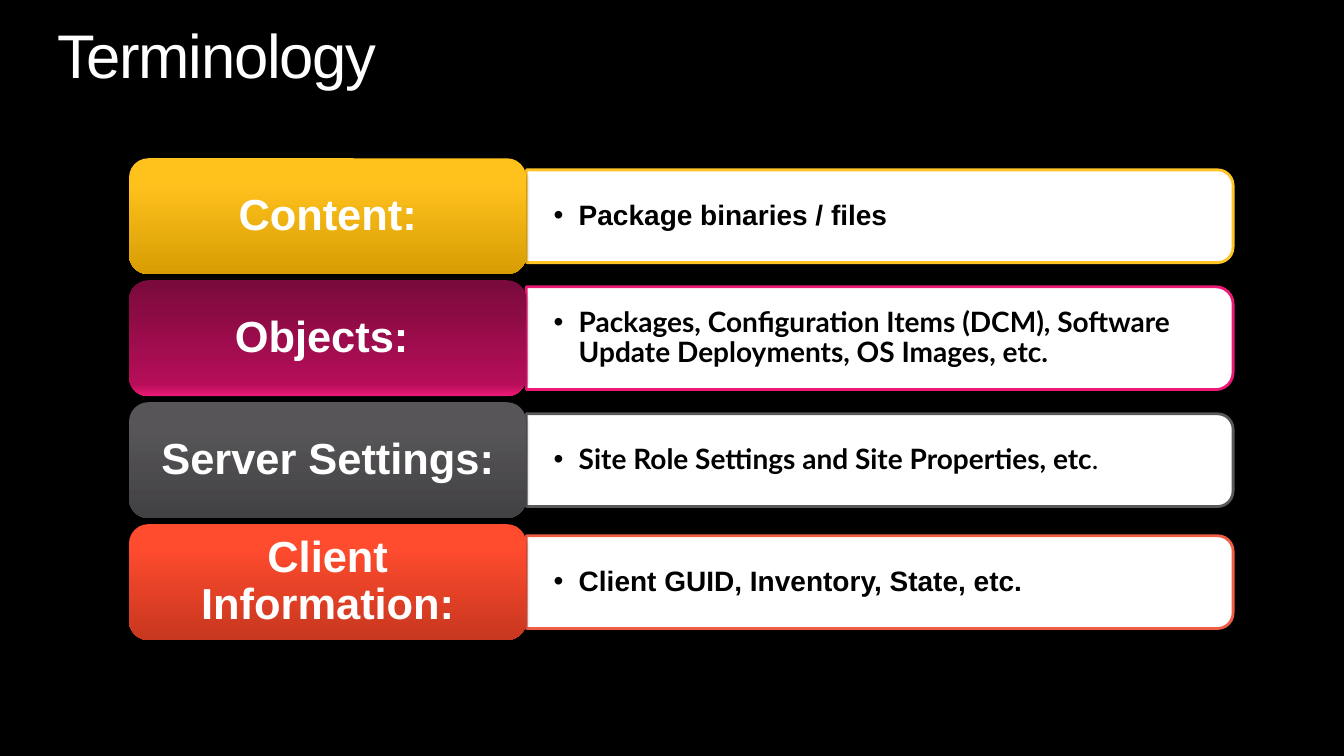
from copy import deepcopy

from lxml.etree import SubElement
from pptx import Presentation
from pptx.dml.color import RGBColor
from pptx.enum.shapes import MSO_SHAPE
from pptx.enum.text import MSO_ANCHOR, PP_ALIGN
from pptx.oxml.ns import qn
from pptx.util import Inches, Pt

BLACK = RGBColor(0x00, 0x00, 0x00)
WHITE = RGBColor(0xFF, 0xFF, 0xFF)
GOLD = RGBColor(0xFF, 0xC4, 0x25)
GOLD_TOP = RGBColor(0xFF, 0xC2, 0x1D)
GOLD_BOTTOM = RGBColor(0xD7, 0x9D, 0x03)
MAGENTA = RGBColor(0xED, 0x19, 0x77)
MAGENTA_TOP = RGBColor(0x79, 0x0A, 0x3B)
MAGENTA_LOW = RGBColor(0xB6, 0x0E, 0x59)
GRAY = RGBColor(0x59, 0x58, 0x5A)
GRAY_TOP = RGBColor(0x57, 0x55, 0x58)
GRAY_BOTTOM = RGBColor(0x42, 0x41, 0x43)
RED = RGBColor(0xF1, 0x5C, 0x44)
RED_TOP = RGBColor(0xFF, 0x4B, 0x2E)
RED_BOTTOM = RGBColor(0xC7, 0x37, 0x1F)

LABEL_WIDTH, LABEL_HEIGHT = 3.94, 1.15
ROW_PITCH = 1.21

# Label, gradient from top to bottom, outline, panel height, font, (text, bold) runs
TERMS = [
    ("Content:", [(0, GOLD_TOP), (0.2, GOLD_TOP), (1, GOLD_BOTTOM)], GOLD, 0.92,
     "Arial", [("Package binaries / files", True)]),
    ("Objects: ", [(0, MAGENTA_TOP), (0.9, MAGENTA_LOW), (1, MAGENTA)], MAGENTA, 1.02,
     "Lato", [("Packages, Configuration Items (DCM), Software Update Deployments, "
               "OS Images, etc.", True)]),
    ("Server Settings:", [(0, GRAY_TOP), (0.2, GRAY_TOP), (1, GRAY_BOTTOM)], GRAY, 0.92,
     "Lato", [("Site Role Settings and Site Properties, etc", True), (".", False)]),
    ("Client Information:", [(0, RED_TOP), (0.2, RED_TOP), (1, RED_BOTTOM)], RED, 0.92,
     "Arial", [("Client GUID, Inventory, State, etc.", True)]),
]


def set_frame(text_frame, horizontal, vertical, anchor):
    text_frame.word_wrap = True
    text_frame.vertical_anchor = anchor
    text_frame.margin_left = text_frame.margin_right = Inches(horizontal)
    text_frame.margin_top = text_frame.margin_bottom = Inches(vertical)


def add_run(paragraph, text, font_name, size, color, bold):
    paragraph.line_spacing = 0.9
    run = paragraph.add_run()
    run.text = text
    run.font.name = font_name
    run.font.size = Pt(size)
    run.font.color.rgb = color
    run.font.bold = bold
    return run


def fill_gradient(shape, stops):
    """Fill the shape from top to bottom with three (position, color) stops."""
    shape.fill.gradient()
    shape.fill.gradient_angle = 270
    stop_list = shape._element.spPr.find(".//" + qn("a:gsLst"))
    stop_list.append(deepcopy(stop_list[0]))
    for stop, (position, color) in zip(shape.fill.gradient_stops, stops):
        stop.position = position
        stop.color.rgb = color


def add_shadow(shape):
    shape.shadow.inherit = False
    effects = shape._element.spPr.find(qn("a:effectLst"))
    shadow = SubElement(effects, qn("a:outerShdw"), blurRad=str(Pt(3.1)),
                        dist=str(Pt(1.8)), dir="5400000", rotWithShape="0")
    color = SubElement(shadow, qn("a:srgbClr"), val=str(BLACK))
    SubElement(color, qn("a:alpha"), val="35000")


def add_bullet(paragraph):
    properties = paragraph._p.get_or_add_pPr()
    properties.set("marL", str(Inches(0.25)))
    properties.set("indent", str(-Inches(0.25)))
    SubElement(properties, qn("a:buFont"), typeface="Arial")
    SubElement(properties, qn("a:buChar"), char="•")


def add_title(slide, left, top, width, height):
    box = slide.shapes.add_textbox(Inches(left), Inches(top), Inches(width), Inches(height))
    set_frame(box.text_frame, 0, 0, MSO_ANCHOR.TOP)
    run = add_run(box.text_frame.paragraphs[0], "Terminology", "Arial", 44, WHITE, False)
    run.font._element.set("spc", "-100")


def add_panel(slide, left, middle, width, height, outline, font_name, runs):
    """White panel rounded on its right side, centred on the height given by middle."""
    # The preset is rounded at the top, so it is laid on its side.
    panel = slide.shapes.add_shape(
        MSO_SHAPE.ROUND_2_SAME_RECTANGLE,
        Inches(left + (width - height) / 2), Inches(middle - width / 2),
        Inches(height), Inches(width))
    panel.rotation = 90
    panel.shadow.inherit = False
    panel.fill.solid()
    panel.fill.fore_color.rgb = WHITE
    panel.line.color.rgb = outline
    panel.line.width = Pt(2)

    box = slide.shapes.add_textbox(Inches(left), Inches(middle - height / 2 + 0.05),
                                   Inches(width - 0.04), Inches(height - 0.1))
    set_frame(box.text_frame, 0.27, 0.14, MSO_ANCHOR.MIDDLE)
    paragraph = box.text_frame.paragraphs[0]
    add_bullet(paragraph)
    for text, bold in runs:
        add_run(paragraph, text, font_name, 20, BLACK, bold)


def add_label(slide, left, top, text, stops):
    label = slide.shapes.add_shape(MSO_SHAPE.ROUNDED_RECTANGLE, Inches(left), Inches(top),
                                   Inches(LABEL_WIDTH), Inches(LABEL_HEIGHT))
    fill_gradient(label, stops)
    label.line.fill.background()
    add_shadow(label)
    # The preset's own text area is already inset by the corner radius.
    set_frame(label.text_frame, 0.13, 0.06, MSO_ANCHOR.MIDDLE)
    paragraph = label.text_frame.paragraphs[0]
    paragraph.alignment = PP_ALIGN.CENTER
    add_run(paragraph, text, "Arial", 31, WHITE, True)


def add_terms(slide, left, top, width):
    for index, (label, stops, outline, panel_height, font_name, runs) in enumerate(TERMS):
        row_top = top + index * ROW_PITCH
        add_panel(slide, left + LABEL_WIDTH, row_top + LABEL_HEIGHT / 2,
                  width - LABEL_WIDTH, panel_height, outline, font_name, runs)
        add_label(slide, left, row_top, label, stops)


def main():
    presentation = Presentation()
    presentation.slide_width = Inches(13.33)
    presentation.slide_height = Inches(7.5)
    slide = presentation.slides.add_slide(presentation.slide_layouts[6])
    slide.background.fill.solid()
    slide.background.fill.fore_color.rgb = BLACK
    add_title(slide, 0.57, 0.25, 12.19, 0.67)
    add_terms(slide, 1.28, 1.57, 10.95)
    presentation.save("out.pptx")


if __name__ == "__main__":
    main()
